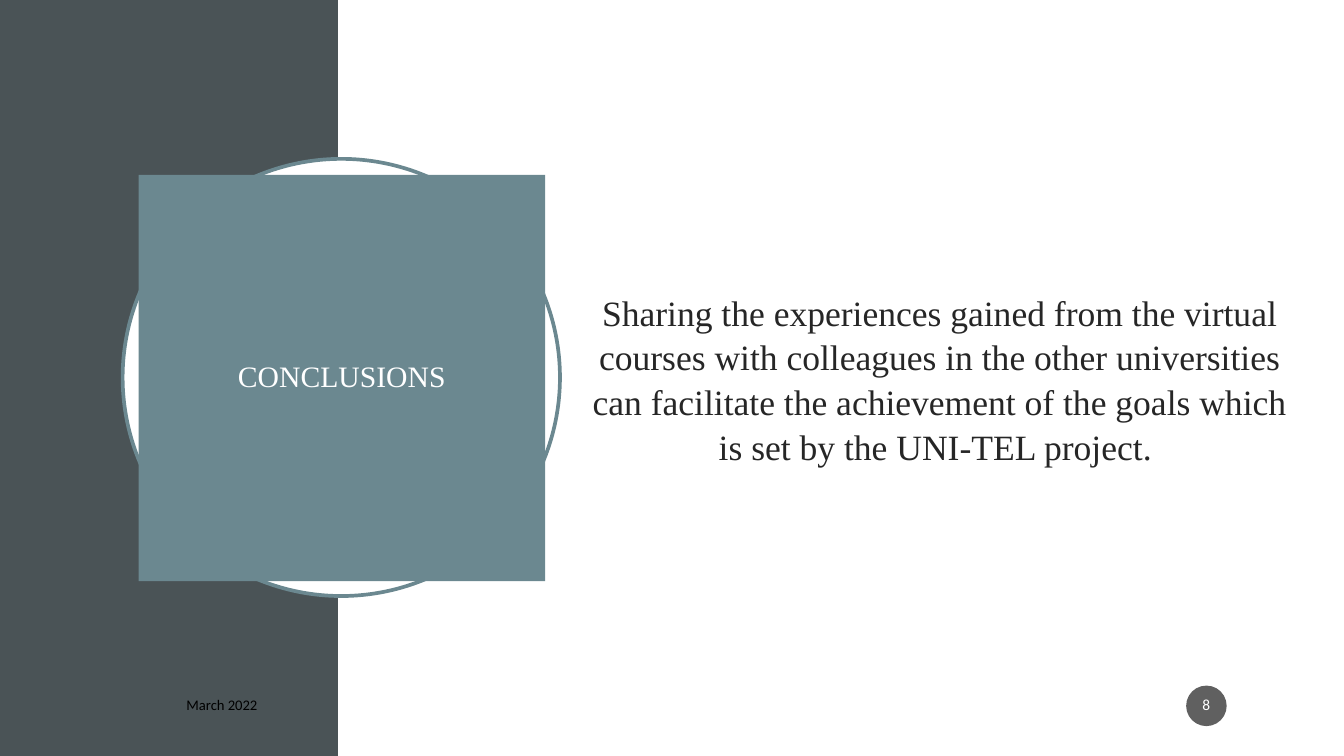
from lxml import etree
from pptx import Presentation
from pptx.dml.color import RGBColor
from pptx.enum.shapes import MSO_SHAPE
from pptx.enum.text import MSO_ANCHOR, MSO_AUTO_SIZE, PP_ALIGN
from pptx.oxml.ns import qn
from pptx.util import Emu, Pt

PX = 9144  # 100 px to the inch
WIDTH, HEIGHT = 1260, 709
BAND_WIDTH = 317

RECT, OVAL = MSO_SHAPE.RECTANGLE, MSO_SHAPE.OVAL
LEFT, CENTER = PP_ALIGN.LEFT, PP_ALIGN.CENTER
MIDDLE = MSO_ANCHOR.MIDDLE
TITLE_ONLY = 5

SLATE = RGBColor(0x4A, 0x53, 0x56)
TEAL = RGBColor(0x6B, 0x88, 0x90)
WHITE = RGBColor(0xFF, 0xFF, 0xFF)
BLACK = RGBColor(0x00, 0x00, 0x00)
INK = RGBColor(0x26, 0x26, 0x26)
BADGE = RGBColor(0x1D, 0x1D, 0x1D)

SERIF, SANS = "Times New Roman", "Calibri"


def px(*lengths):
    return [Emu(length * PX) for length in lengths]


def paint(shape, color, alpha=None):
    """Fill a shape, with alpha as percent opacity."""
    shape.fill.solid()
    shape.fill.fore_color.rgb = color
    if alpha is not None:
        tone = shape.element.spPr.find(qn("a:solidFill"))[0]
        etree.SubElement(tone, qn("a:alpha"), val=str(alpha * 1000))


def add_shape(page, kind, place, color, alpha=None, line=None, weight=0):
    shape = page.shapes.add_shape(kind, *px(*place))
    shape.shadow.inherit = False
    paint(shape, color, alpha)
    if line is None:
        shape.line.fill.background()
    else:
        shape.line.color.rgb = line
        shape.line.width = Pt(weight)
    return shape


def write(shape, text, size, font, color, align=CENTER, spacing=1.0, insets=(10, 5)):
    frame = shape.text_frame
    frame.auto_size = MSO_AUTO_SIZE.NONE
    frame.word_wrap = True
    frame.vertical_anchor = MIDDLE
    side, edge = px(*insets)
    frame.margin_left = frame.margin_right = side
    frame.margin_top = frame.margin_bottom = edge
    para = frame.paragraphs[0]
    para.alignment = align
    para.line_spacing = spacing
    span = para.add_run()
    span.text = text
    span.font.size = Pt(size)
    span.font.name = font
    span.font.color.rgb = color


def add_text(page, place, text, **style):
    write(page.shapes.add_textbox(*px(*place)), text, **style)


def add_title(page, place, text, below, **style):
    """Format the title placeholder and stack it just above a shape."""
    title = page.shapes.title
    title.left, title.top, title.width, title.height = px(*place)
    paint(title, TEAL)
    write(title, text, **style)
    below.element.addnext(title.element)


def main():
    deck = Presentation()
    deck.slide_width, deck.slide_height = px(WIDTH, HEIGHT)
    page = deck.slides.add_slide(deck.slide_layouts[TITLE_ONLY])

    add_shape(page, RECT, (0, 0, BAND_WIDTH, HEIGHT), SLATE)
    add_shape(page, RECT, (BAND_WIDTH, 0, WIDTH - BAND_WIDTH, HEIGHT), WHITE)
    ring = add_shape(page, OVAL, (115, 149, 410, 410), WHITE, line=TEAL, weight=2.5)
    add_title(page, (130, 164, 381, 381), "CONCLUSIONS", ring, size=20, font=SERIF,
              color=WHITE, spacing=0.9, insets=(20, 20))

    add_text(page, (541, 145, 680, 419),
             "Sharing the experiences gained from the virtual courses with colleagues "
             "in the other universities can facilitate the achievement of the goals "
             "which is set by the UNI-TEL project. ",
             size=24, font=SERIF, color=INK, spacing=1.05, insets=(11, 6))

    badge = add_shape(page, OVAL, (1112, 643, 38, 38), BADGE, alpha=70)
    write(badge, "8", size=10.4, font=SANS, color=WHITE, spacing=0.9, insets=(2, 5))
    add_text(page, (165, 644, 610, 33), "March 2022",
             size=9.9, font=SANS, color=BLACK, align=LEFT)

    deck.save("out.pptx")


if __name__ == "__main__":
    main()
